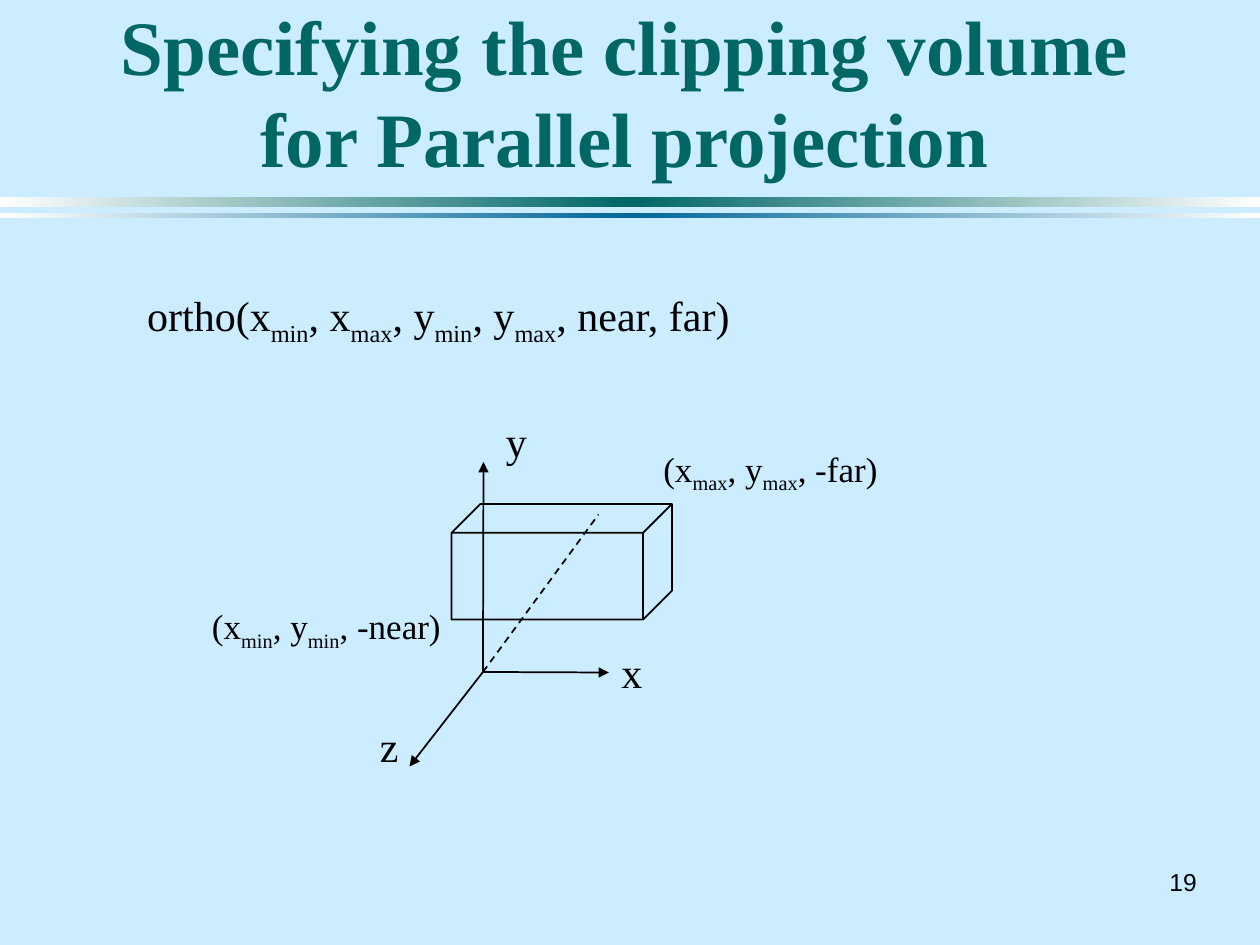
from copy import deepcopy

from pptx import Presentation
from pptx.dml.color import RGBColor
from pptx.enum.dml import MSO_LINE
from pptx.enum.shapes import MSO_CONNECTOR as Connector, MSO_SHAPE as Shape
from pptx.enum.text import MSO_ANCHOR as Anchor, PP_ALIGN as Align
from pptx.oxml.ns import qn
from pptx.oxml.xmlchemy import OxmlElement
from pptx.util import Pt

COLORS = {"sky": "CCECFF", "teal": "006666", "blue": "006699",
          "white": "FFFFFF", "ink": "000000"}
SERIF, SANS = "Times New Roman", "Arial"


def rgb(name):
    return RGBColor.from_string(COLORS[name])


class Board:
    """Holds the style and the current slide; all lengths are in points."""

    def __init__(self, slide):
        self.slide = slide
        self.shapes = slide.shapes
        background = slide.background.fill
        background.solid()
        background.fore_color.rgb = rgb("sky")

    def band(self, top, height, color):
        """Full-width bar fading from white to a colour and back."""
        bar = self.shapes.add_shape(Shape.RECTANGLE, 0, Pt(top), Pt(720), Pt(height))
        bar.shadow.inherit = False
        bar.line.fill.background()
        bar.fill.gradient()
        bar.fill.gradient_angle = 0
        stops = bar._element.spPr.find(".//" + qn("a:gsLst"))
        stops.append(deepcopy(stops[0]))
        fade = zip(bar.fill.gradient_stops, (0, 0.5, 1), ("white", color, "white"))
        for stop, position, tint in fade:
            stop.position = position
            stop.color.rgb = rgb(tint)

    def text(self, left, top, width, height, content, size=24, font=SERIF,
             color="ink", bold=False, align=Align.LEFT, anchor=Anchor.TOP, wrap=False):
        """Text box; parts between underscores become subscripts."""
        box = self.shapes.add_textbox(Pt(left), Pt(top), Pt(width), Pt(height))
        frame = box.text_frame
        frame.word_wrap = wrap
        frame.vertical_anchor = anchor
        paragraph = frame.paragraphs[0]
        paragraph.alignment = align
        for index, part in enumerate(content.split("_")):
            run = paragraph.add_run()
            run.text = part
            run.font.name, run.font.size, run.font.bold = font, Pt(size), bold
            run.font.color.rgb = rgb(color)
            if index % 2:
                run.font._element.set("baseline", "-25000")

    def line(self, start, end, arrow=True):
        """Solid arrow, or a dashed line without a head."""
        line = self.shapes.add_connector(
            Connector.STRAIGHT, *(Pt(value) for value in (*start, *end)))
        line.line.color.rgb = rgb("ink")
        line.line.width = Pt(1)
        if arrow:
            head = OxmlElement("a:tailEnd")
            head.set("type", "triangle")
            line.line._get_or_add_ln().append(head)
        else:
            line.line.dash_style = MSO_LINE.DASH
        line._element.spPr.append(OxmlElement("a:effectLst"))

    def cube(self, left, top, width, height):
        """Outlined box in oblique view."""
        cube = self.shapes.add_shape(Shape.CUBE, Pt(left), Pt(top), Pt(width), Pt(height))
        cube.adjustments[0] = 0.25
        cube.shadow.inherit = False
        cube.fill.background()
        cube.line.color.rgb = rgb("ink")
        cube.line.width = Pt(1)


def main():
    deck = Presentation()
    deck.slide_width, deck.slide_height = Pt(720), Pt(540)
    board = Board(deck.slides.add_slide(deck.slide_layouts[6]))

    # Divider bands and page number
    board.band(112.5, 6, "teal")
    board.band(121.5, 3, "blue")
    board.text(660, 492, 31, 24, "19", size=14, font=SANS,
               align=Align.RIGHT, anchor=Anchor.MIDDLE)

    # Title and call signature
    board.text(48, 18, 618, 90, "Specifying the clipping volume for Parallel projection",
               size=44, color="teal", bold=True, align=Align.CENTER,
               anchor=Anchor.BOTTOM, wrap=True)
    board.text(77, 162, 397.5, 36,
               "ortho(x_min_, x_max_, y_min_, y_max_, near, far)", wrap=True)

    # Coordinate axes with their names
    origin = (276, 384)
    axes = [("y", (276.3, 264), (282, 234)),
            ("x", (348, 384.3), (348, 366)),
            ("z", (234, 438), (210, 408))]
    for name, tip, label in axes:
        board.line(origin, tip)
        board.text(*label, 26.5, 36, name)

    # Clipping volume, line of sight and corner labels
    board.cube(258, 288, 126, 66)
    board.line(origin, (342, 294), arrow=False)
    board.text(114, 342, 149, 31, "(x_min_, y_min_, -near)", size=20)
    board.text(372, 252, 141, 31, "(x_max_, y_max_, -far)", size=20)

    deck.save("out.pptx")


if __name__ == "__main__":
    main()
